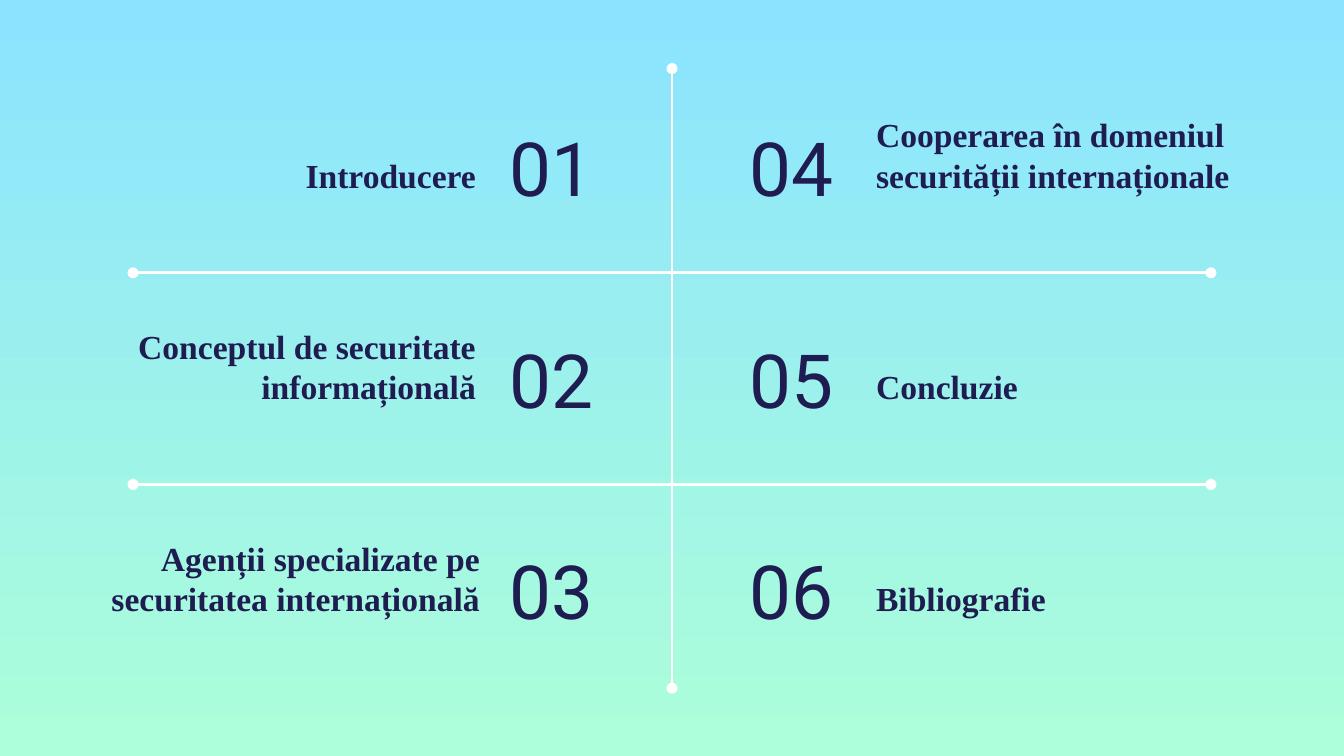
from dataclasses import dataclass

from lxml.etree import SubElement
from pptx import Presentation
from pptx.dml.color import RGBColor
from pptx.enum.shapes import MSO_CONNECTOR
from pptx.enum.text import MSO_ANCHOR, PP_ALIGN
from pptx.oxml.ns import qn
from pptx.util import Inches, Pt

COLORS = {"top": "8BE3FF", "bottom": "ACFFD9", "ink": "1F1C51", "rule": "FFFFFF"}
WIDTH = 10
HEIGHT = WIDTH * 9 / 16
CENTER = WIDTH / 2
ROW = HEIGHT * 0.28
NUMBER_TOP, LABEL_TOP, RULE_TOP = 0.81, 1.05, 2.03
NUMBER_W, NUMBER_H = 1.3, 0.86
LABEL_W, LABEL_H = 2.98, 0.5


@dataclass(frozen=True)
class Column:
    number_left: float
    label_left: float
    number_align: PP_ALIGN
    label_align: PP_ALIGN


@dataclass(frozen=True)
class Topic:
    text: str
    column: Column
    row: int
    nudge: float = 0


@dataclass(frozen=True)
class Style:
    font: str
    size: int
    bold: bool
    anchor: MSO_ANCHOR


LEFT = Column(3.69, 0.66, PP_ALIGN.LEFT, PP_ALIGN.RIGHT)
RIGHT = Column(CENTER, 6.42, PP_ALIGN.RIGHT, PP_ALIGN.LEFT)
NUMBER = Style("Roboto", 40, False, MSO_ANCHOR.MIDDLE)
LABEL = Style("Times New Roman", 18, True, MSO_ANCHOR.BOTTOM)

TOPICS = [
    Topic("Introducere", LEFT, 0),
    Topic("Conceptul de securitate informațională", LEFT, 1),
    Topic("Agenții specializate pe securitatea internațională", LEFT, 2, 0.03),
    Topic("Cooperarea în domeniul securității internaționale", RIGHT, 0),
    Topic("Concluzie", RIGHT, 1),
    Topic("Bibliografie", RIGHT, 2),
]


def color(name: str) -> RGBColor:
    return RGBColor.from_string(COLORS[name])


def add_text(s, text: str, box: tuple, style: Style, align: PP_ALIGN) -> None:
    tf = s.shapes.add_textbox(*map(Inches, box)).text_frame
    tf.word_wrap = True
    tf.vertical_anchor = style.anchor
    tf.margin_left = tf.margin_right = Inches(0.1)
    tf.margin_top = tf.margin_bottom = Inches(0.1)
    p = tf.paragraphs[0]
    p.text = text
    p.alignment = align
    p.font.name = style.font
    p.font.size = Pt(style.size)
    p.font.bold = style.bold
    p.font.color.rgb = color("ink")


def add_rule(s, x1: float, y1: float, x2: float, y2: float) -> None:
    ends = map(Inches, (x1, y1, x2, y2))
    sp = s.shapes.add_connector(MSO_CONNECTOR.STRAIGHT, *ends)
    sp.line.color.rgb = color("rule")
    sp.line.width = Pt(1.5)
    ln = sp.line._get_or_add_ln()
    for tag in ("a:headEnd", "a:tailEnd"):
        SubElement(ln, qn(tag), type="oval", w="med", len="med")
    SubElement(sp._element.spPr, qn("a:effectLst"))


def add_topic(s, number: int, topic: Topic) -> None:
    col, drop = topic.column, topic.row * ROW
    number_box = (col.number_left, NUMBER_TOP + drop, NUMBER_W, NUMBER_H)
    label_box = (col.label_left + topic.nudge, LABEL_TOP + drop, LABEL_W, LABEL_H)
    add_text(s, f"{number:02d}", number_box, NUMBER, col.number_align)
    add_text(s, topic.text, label_box, LABEL, col.label_align)


def main() -> None:
    prs = Presentation()
    prs.slide_width, prs.slide_height = Inches(WIDTH), Inches(HEIGHT)
    s = prs.slides.add_slide(prs.slide_layouts[6])

    fill = s.background.fill
    fill.gradient()
    fill.gradient_angle = 270
    for stop, name, position in zip(fill.gradient_stops, ("top", "bottom"), (0, 1)):
        stop.color.rgb = color(name)
        stop.position = position

    add_rule(s, CENTER, 0.51, CENTER, 5.12)
    for row in range(2):
        y = RULE_TOP + row * ROW
        add_rule(s, 0.99, y, WIDTH - 0.99, y)
    for number, topic in enumerate(TOPICS, 1):
        add_topic(s, number, topic)

    prs.save("out.pptx")


if __name__ == "__main__":
    main()
